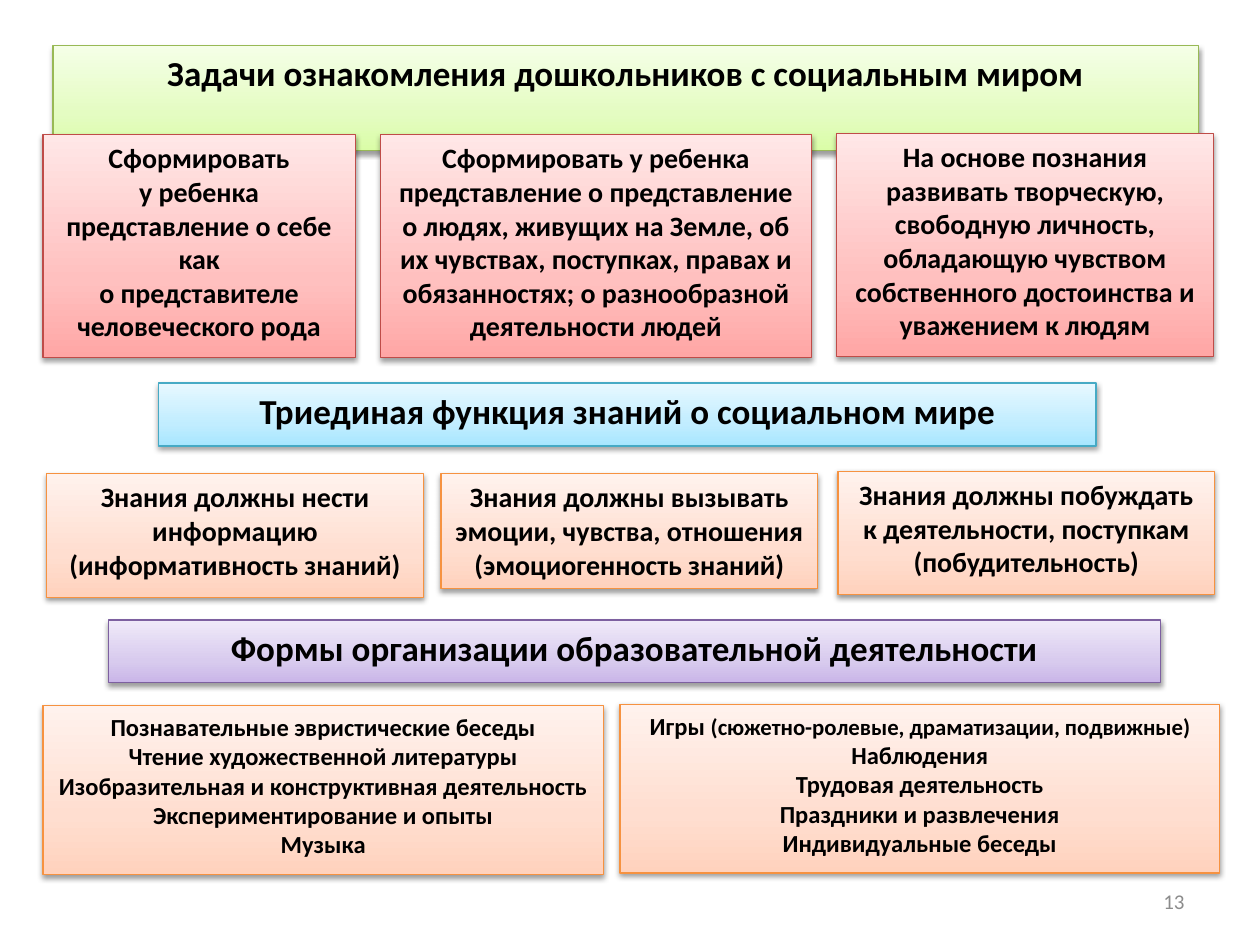
from dataclasses import dataclass

from lxml import etree
from pptx import Presentation
from pptx.dml.color import RGBColor
from pptx.enum.shapes import MSO_SHAPE
from pptx.enum.text import MSO_ANCHOR, MSO_AUTO_SIZE, PP_ALIGN
from pptx.oxml.ns import qn
from pptx.util import Inches, Pt

RECTANGLE = MSO_SHAPE.RECTANGLE
CENTER, RIGHT = PP_ALIGN.CENTER, PP_ALIGN.RIGHT
TOP, MIDDLE = MSO_ANCHOR.TOP, MSO_ANCHOR.MIDDLE
FIT_SHAPE = MSO_AUTO_SIZE.SHAPE_TO_FIT_TEXT
TITLE_ONLY = 5


@dataclass(frozen=True)
class Palette:
    stops: tuple
    border: str


@dataclass(frozen=True)
class Theme:
    font: str = "Calibri"
    text: str = "000000"
    text_outline: str = "31859C"
    page_number: str = "8C8C8C"
    heading_size: int = 20
    card_size: int = 16
    list_size: int = 14
    detail_size: int = 13
    number_size: int = 12
    green: Palette = Palette(("DAFDA7", "E4FCC2", "F5FFE7"), "98B955")
    red: Palette = Palette(("FFA6A5", "FFC0BF", "FFE7E7"), "BF4C48")
    blue: Palette = Palette(("A7E6FF", "C1EDFF", "E7F8FF"), "46AAC5")
    orange: Palette = Palette(("FFD2BD", "FFDED0", "FFF2ED"), "F69240")
    purple: Palette = Palette(("C9B5E8", "D8CBEE", "F0EAF9"), "7D60A0")


THEME = Theme()

TASKS = [
    (0.34, 1.07, 2.48, 1.77, ["Сформировать", "у ребенка представление о себе как",
                              "о представителе человеческого рода"]),
    (3.02, 1.07, 3.42, 1.77, ["Сформировать у ребенка представление о представление о людях, "
                              "живущих на Земле, об их чувствах, поступках, правах и "
                              "обязанностях; о разнообразной деятельности людей"]),
    (6.64, 1.06, 2.99, 1.77, ["На основе познания развивать творческую, свободную личность, "
                              "обладающую чувством собственного достоинства и уважением к людям"]),
]
FUNCTIONS = [
    (0.37, 3.76, 2.99, 0.98, ["Знания должны нести информацию (информативность знаний)"]),
    (3.5, 3.76, 2.99, 0.91, ["Знания должны вызывать эмоции, чувства, отношения "
                             "(эмоциогенность знаний)"]),
    (6.65, 3.74, 2.99, 0.98, ["Знания должны побуждать к деятельности, поступкам "
                              "(побудительность)"]),
]
STUDY_FORMS = (0.34, 5.6, 4.45, 1.34, [
    "Познавательные эвристические беседы", "Чтение художественной литературы",
    "Изобразительная и конструктивная деятельность", "Экспериментирование и опыты", "Музыка"])
PLAY_FORMS = (4.92, 5.59, 4.76, 1.34, [
    "Игры ", "Наблюдения", "Трудовая деятельность", "Праздники и развлечения",
    "Индивидуальные беседы"])


def add_child(parent, tag, **attributes):
    return etree.SubElement(parent, qn(tag), attributes)


def paint(panel, palette):
    panel.fill.gradient()
    panel.fill.gradient_angle = 90
    properties = panel.fill._xPr
    stops = properties.find(qn("a:gradFill")).find(qn("a:gsLst"))
    for stop in list(stops):
        stops.remove(stop)
    for position, color in zip((0, 35, 100), palette.stops):
        stop = add_child(stops, "a:gs", pos=str(position * 1000))
        add_child(stop, "a:srgbClr", val=color)
    panel.line.color.rgb = RGBColor.from_string(palette.border)
    panel.line.width = Pt(0.75)
    panel.shadow.inherit = False
    shadow = add_child(properties.find(qn("a:effectLst")), "a:outerShdw",
                       blurRad=str(Pt(3.1)), dist=str(Pt(1.6)), dir="5400000", rotWithShape="0")
    add_child(add_child(shadow, "a:srgbClr", val="000000"), "a:alpha", val="38000")


def style_run(run, size, color=THEME.text, bold=True, outlined=False):
    run.font.name = THEME.font
    run.font.size = Pt(size)
    run.font.bold = bold
    run.font.color.rgb = RGBColor.from_string(color)
    if outlined:
        outline = etree.Element(qn("a:ln"), w=str(Pt(0.75)))
        add_child(add_child(outline, "a:solidFill"), "a:srgbClr", val=THEME.text_outline)
        run.font._element.insert(0, outline)


def write(frame, lines, size, align=CENTER, anchor=TOP, **run_style):
    frame.word_wrap = True
    frame.vertical_anchor = anchor
    frame.text = "\n".join(lines)
    for paragraph in frame.paragraphs:
        paragraph.alignment = align
        for run in paragraph.runs:
            style_run(run, size, **run_style)


def place(panel, left, top, width, height):
    panel.left, panel.top = Inches(left), Inches(top)
    panel.width, panel.height = Inches(width), Inches(height)


def fill_panel(panel, box, lines, size, palette, outlined):
    place(panel, *box)
    paint(panel, palette)
    write(panel.text_frame, lines, size, outlined=outlined)
    panel.text_frame.auto_size = FIT_SHAPE


def add_panel(slide, box, lines, size, palette, outlined):
    panel = slide.shapes.add_shape(RECTANGLE, *map(Inches, box))
    fill_panel(panel, box, lines, size, palette, outlined)
    return panel


def add_heading(slide, box, text, palette):
    add_panel(slide, box, [text], THEME.heading_size, palette, False)


def add_card(slide, card, size, palette):
    *box, lines = card
    return add_panel(slide, box, lines, size, palette, True)


def add_page_number(slide, number):
    page_number = slide.shapes.add_textbox(*map(Inches, (7.17, 6.95, 2.33, 0.4)))
    write(page_number.text_frame, [number], THEME.number_size, RIGHT, MIDDLE,
          color=THEME.page_number, bold=False)


def main():
    deck = Presentation()
    deck.slide_width, deck.slide_height = Inches(10), Inches(7.5)
    slide = deck.slides.add_slide(deck.slide_layouts[TITLE_ONLY])

    fill_panel(slide.shapes.title, (0.42, 0.36, 9.09, 0.5),
               ["Задачи ознакомления дошкольников с социальным миром"],
               THEME.heading_size, THEME.green, False)
    for task in TASKS:
        add_card(slide, task, THEME.card_size, THEME.red)

    add_heading(slide, (1.26, 3.04, 7.44, 0.5),
                "Триединая функция знаний о социальном мире", THEME.blue)
    for function in FUNCTIONS:
        add_card(slide, function, THEME.card_size, THEME.orange)

    add_heading(slide, (0.86, 4.92, 8.35, 0.5),
                "Формы организации образовательной деятельности", THEME.purple)
    add_card(slide, STUDY_FORMS, THEME.list_size, THEME.orange)
    play_forms = add_card(slide, PLAY_FORMS, THEME.list_size, THEME.orange)
    game_kinds = play_forms.text_frame.paragraphs[0].add_run()
    game_kinds.text = "(сюжетно-ролевые, драматизации, подвижные)"
    style_run(game_kinds, THEME.detail_size, outlined=True)

    add_page_number(slide, "13")
    deck.save("out.pptx")


if __name__ == "__main__":
    main()
